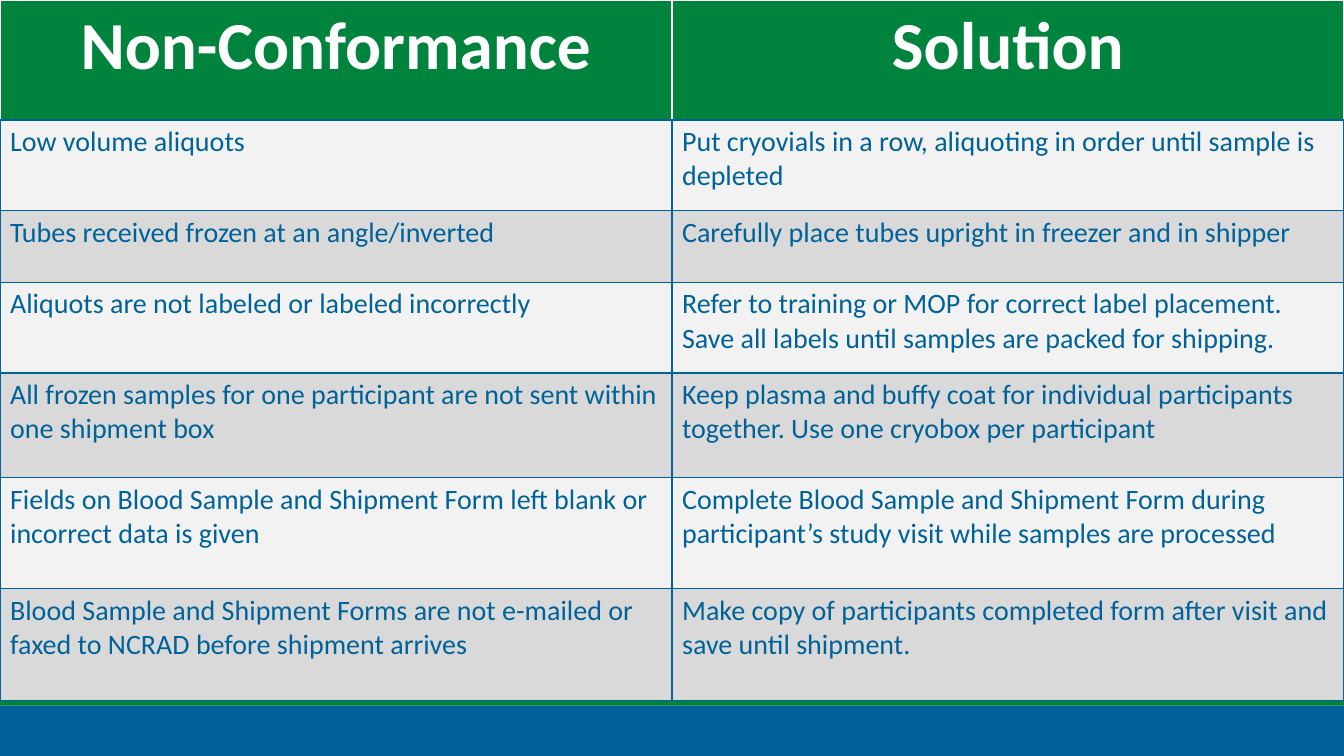
from lxml import etree
from pptx import Presentation
from pptx.dml.color import RGBColor
from pptx.enum.shapes import MSO_SHAPE
from pptx.enum.text import PP_ALIGN
from pptx.oxml.ns import qn
from pptx.util import Inches, Pt

RECTANGLE = MSO_SHAPE.RECTANGLE
LEFT, CENTER, JUSTIFY = PP_ALIGN.LEFT, PP_ALIGN.CENTER, PP_ALIGN.JUSTIFY
BLUE, GREEN, WHITE = "006298", "00843D", "FFFFFF"
BAND_FILLS = ["F2F2F2", "D9D9D9"]
SLIDE_WIDTH = 13.33

ROWS = [
    ("Non-Conformance", "Solution"),
    ("Low volume aliquots",
     "Put cryovials in a row, aliquoting in order until sample is depleted"),
    ("Tubes received frozen at an angle/inverted",
     "Carefully place tubes upright in freezer and in shipper"),
    ("Aliquots are not labeled or labeled incorrectly",
     "Refer to training or MOP for correct label placement. "
     "Save all labels until samples are packed for shipping."),
    ("All frozen samples for one participant are not sent within one shipment box",
     "Keep plasma and buffy coat for individual participants together. "
     "Use one cryobox per participant"),
    ("Fields on Blood Sample and Shipment Form left blank or incorrect data is given",
     "Complete Blood Sample and Shipment Form during participant’s study visit "
     "while samples are processed"),
    ("Blood Sample and Shipment Forms are not e-mailed or faxed to NCRAD "
     "before shipment arrives",
     "Make copy of participants completed form after visit and save until shipment."),
]
ROW_HEIGHTS = [1.19, 0.9, 0.71, 0.9, 1.04, 1.1, 1.11]


def color(hex_string):
    return RGBColor.from_string(hex_string)


def set_borders(cell, side_colors):
    """Give the cell 1 pt borders; they precede the fill in the cell properties."""
    properties = cell._tc.get_or_add_tcPr()
    for index, (side, hex_string) in enumerate(side_colors.items()):
        line = etree.Element(qn("a:" + side), w=str(Pt(1)))
        fill = etree.SubElement(line, qn("a:solidFill"))
        etree.SubElement(fill, qn("a:srgbClr"), val=hex_string)
        properties.insert(index, line)


presentation = Presentation()
presentation.slide_width = Inches(SLIDE_WIDTH)
presentation.slide_height = Inches(7.5)
slide = presentation.slides.add_slide(presentation.slide_layouts[6])

# Footer bands
for top, height, fill in [(7, 0.5, BLUE), (6.93, 0.07, GREEN)]:
    band = slide.shapes.add_shape(
        RECTANGLE, 0, Inches(top), Inches(SLIDE_WIDTH), Inches(height))
    band.shadow.inherit = False
    band.fill.solid()
    band.fill.fore_color.rgb = color(fill)
    band.line.fill.background()

# Table of problems and solutions
table = slide.shapes.add_table(
    len(ROWS), 2, 0, 0, Inches(SLIDE_WIDTH), Inches(sum(ROW_HEIGHTS))).table
for column in table.columns:
    column.width = Inches(SLIDE_WIDTH / 2)

for row_index, texts in enumerate(ROWS):
    table.rows[row_index].height = Inches(ROW_HEIGHTS[row_index])
    is_header = row_index == 0
    for column_index, text in enumerate(texts):
        cell = table.cell(row_index, column_index)
        cell.fill.solid()
        cell.fill.fore_color.rgb = color(
            GREEN if is_header else BAND_FILLS[(row_index - 1) % 2])
        edge = WHITE if is_header else BLUE
        set_borders(cell, {"lnL": edge, "lnR": edge, "lnT": edge if is_header else BLUE,
                           "lnB": BLUE})

        cell.text_frame.text = text
        paragraph = cell.text_frame.paragraphs[0]
        if is_header:
            paragraph.alignment = CENTER
        else:
            paragraph.alignment = JUSTIFY if row_index < 3 and column_index == 0 else LEFT
        font = paragraph.runs[0].font
        font.name = "Calibri"
        font.size = Pt(48 if is_header else 20)
        font.bold = is_header
        font.color.rgb = color(WHITE if is_header else BLUE)

presentation.save("out.pptx")
